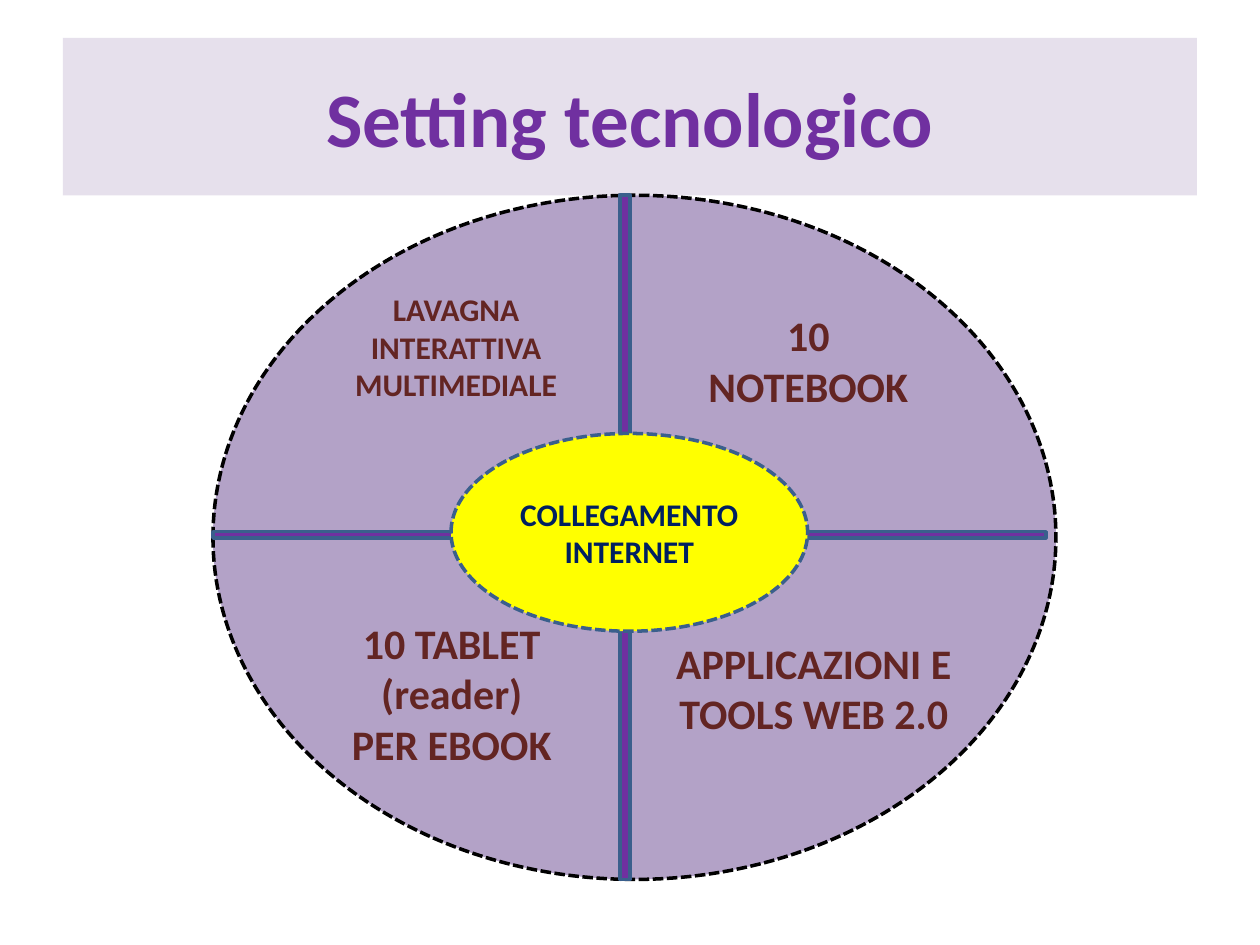
"""Build the slide on the classroom's technological setting."""
from pptx import Presentation
from pptx.dml.color import RGBColor
from pptx.enum.dml import MSO_LINE
from pptx.enum.shapes import MSO_SHAPE
from pptx.enum.text import MSO_ANCHOR, PP_ALIGN
from pptx.util import Inches, Pt

RECTANGLE, OVAL = MSO_SHAPE.RECTANGLE, MSO_SHAPE.OVAL
DASH = MSO_LINE.SQUARE_DOT
CENTER = PP_ALIGN.CENTER
TOP, MIDDLE = MSO_ANCHOR.TOP, MSO_ANCHOR.MIDDLE

LAVENDER = RGBColor(0xE6, 0xE0, 0xEC)
LILAC = RGBColor(0xB3, 0xA2, 0xC7)
PURPLE = RGBColor(0x70, 0x30, 0xA0)
BLUE = RGBColor(0x3A, 0x5F, 0x8C)
NAVY = RGBColor(0x00, 0x20, 0x60)
YELLOW = RGBColor(0xFF, 0xFF, 0x00)
MAROON = RGBColor(0x63, 0x25, 0x23)
BLACK = RGBColor(0x00, 0x00, 0x00)

TITLE = "Setting tecnologico"
HUB = "COLLEGAMENTO INTERNET"
QUADRANTS = [
    ("LAVAGNA INTERATTIVA MULTIMEDIALE", 18, (2.4, 2.25, 2.44, 1.01)),
    ("10 NOTEBOOK", 24, (5.47, 2.41, 1.89, 0.91)),
    ("10 TABLET (reader) PER EBOOK", 24, (2.64, 4.85, 1.89, 1.31)),
    ("APPLICAZIONI E TOOLS WEB 2.0", 24, (5.08, 5.01, 2.76, 0.91)),
]
WHEEL_LEFT, WHEEL_TOP, WHEEL_WIDTH, WHEEL_HEIGHT = 1.69, 1.55, 6.69, 5.43


def add_figure(slide, kind, box, fill, line=None, dash=None):
    figure = slide.shapes.add_shape(kind, *map(Inches, box))
    figure.shadow.inherit = False
    figure.fill.solid()
    figure.fill.fore_color.rgb = fill
    if line is None:
        figure.line.fill.background()
    else:
        figure.line.color.rgb = line
        figure.line.width = Pt(2)
        figure.line.dash_style = dash
    return figure


def write(holder, text, size, color, anchor=MIDDLE):
    frame = holder.text_frame
    frame.word_wrap = True
    frame.vertical_anchor = anchor
    paragraph = frame.paragraphs[0]
    paragraph.alignment = CENTER
    run = paragraph.add_run()
    run.text = text
    run.font.name = "Calibri"
    run.font.size = Pt(size)
    run.font.bold = True
    run.font.color.rgb = color


def main():
    deck = Presentation()
    deck.slide_width, deck.slide_height = Inches(10), Inches(7.5)
    slide = deck.slides.add_slide(deck.slide_layouts[6])

    banner = add_figure(slide, RECTANGLE, (0.5, 0.3, 9, 1.25), LAVENDER)
    write(banner, TITLE, 44, PURPLE)

    wheel = (WHEEL_LEFT, WHEEL_TOP, WHEEL_WIDTH, WHEEL_HEIGHT)
    add_figure(slide, OVAL, wheel, LILAC, BLACK, DASH)
    vertical_bar = (4.92, WHEEL_TOP, 0.08, WHEEL_HEIGHT)
    horizontal_bar = (WHEEL_LEFT, 4.22, 6.61, 0.05)
    for bar in (vertical_bar, horizontal_bar):
        add_figure(slide, RECTANGLE, bar, PURPLE, BLUE)

    hub = add_figure(slide, OVAL, (3.58, 3.44, 2.83, 1.57), YELLOW, BLUE, DASH)
    write(hub, HUB, 18, NAVY)

    for resource, size, box in QUADRANTS:
        label = slide.shapes.add_textbox(*map(Inches, box))
        write(label, resource, size, MAROON, anchor=TOP)

    deck.save("out.pptx")


if __name__ == "__main__":
    main()
